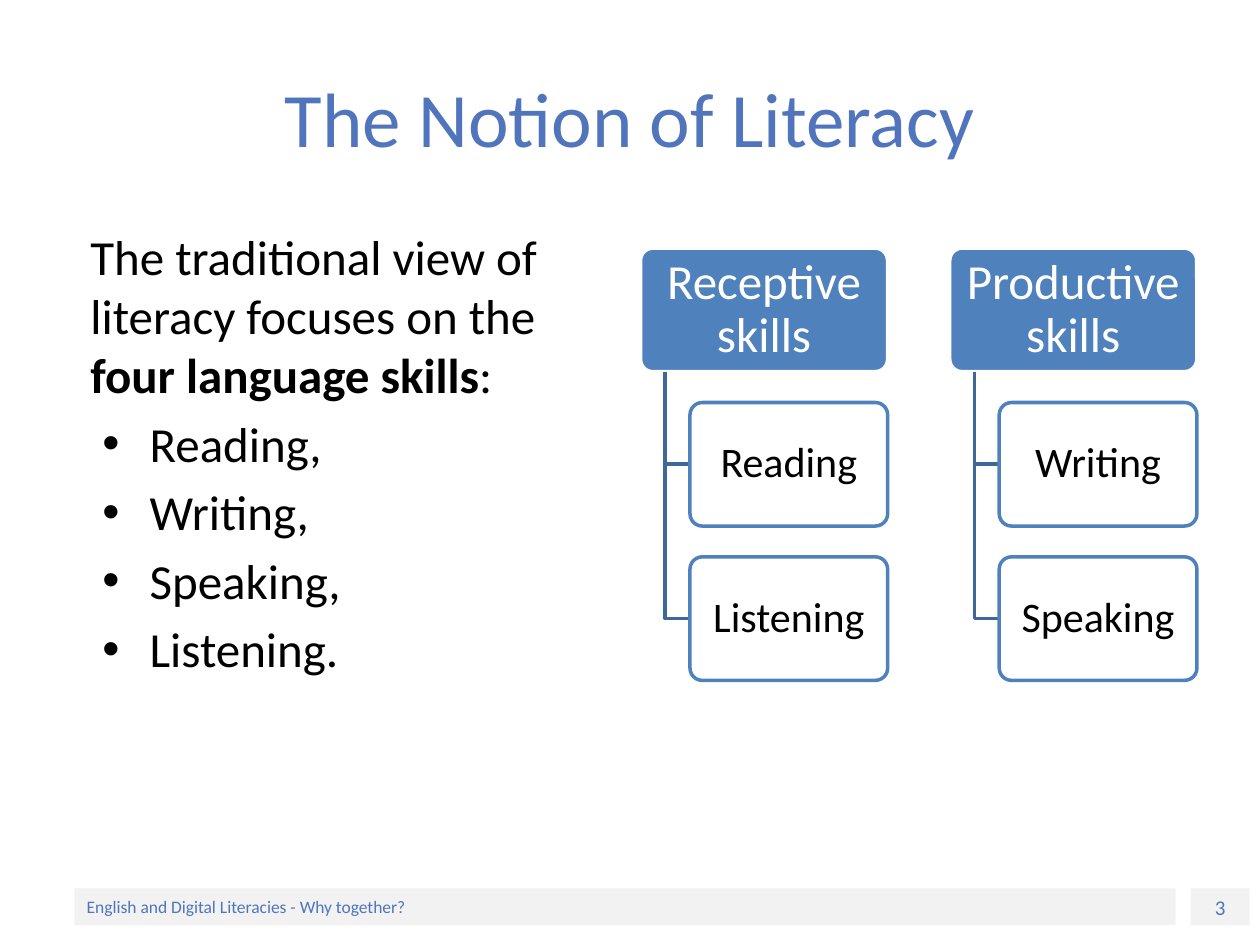
from lxml import etree
from pptx import Presentation
from pptx.dml.color import RGBColor
from pptx.enum import shapes, text
from pptx.oxml import ns
from pptx.util import Pt

BLUE = RGBColor(0x50, 0x75, 0xBC)
FILL = RGBColor(0x4F, 0x81, 0xBD)
LINE = RGBColor(0x3F, 0x67, 0x97)
GREY = RGBColor(0xF2, 0xF2, 0xF2)
WHITE = RGBColor(0xFF, 0xFF, 0xFF)
BLACK = RGBColor(0, 0, 0)
KIND = shapes.MSO_SHAPE
MID = text.MSO_ANCHOR.MIDDLE
LEFT, CENTER = text.PP_ALIGN.LEFT, text.PP_ALIGN.CENTER


def write(par, words, size, color, align=LEFT, bold=False):
    par.alignment = align
    run = par.add_run()
    run.text = words
    form = {"name": "Calibri", "size": Pt(size), "bold": bold}
    for key, val in form.items():
        setattr(run.font, key, val)
    run.font.color.rgb = color


def block(kind, left, top, width, height, fill, edge=None, pad=(7.2, 3.6)):
    """Add a filled shape and return it with its first paragraph."""
    box = slide.shapes.add_shape(kind, Pt(left), Pt(top), Pt(width), Pt(height))
    box.shadow.inherit = False
    box.fill.solid()
    box.fill.fore_color.rgb = fill
    if edge is None:
        box.line.fill.background()
    else:
        box.line.color.rgb = edge
        box.line.width = Pt(2)
        box.adjustments[0] = 0.1
    frame = box.text_frame
    form = {"word_wrap": True, "vertical_anchor": MID,
            "margin_left": Pt(pad[0]), "margin_right": Pt(pad[0]),
            "margin_top": Pt(pad[1]), "margin_bottom": Pt(pad[1])}
    for key, val in form.items():
        setattr(frame, key, val)
    return box, frame.paragraphs[0]


prs = Presentation()
prs.slide_width, prs.slide_height = Pt(720), Pt(540)
slide = prs.slides.add_slide(prs.slide_layouts[6])

# Footer
foot = [(680.4, 33.8, "3", 12, CENTER),
        (42.5, 629.3, "English and Digital Literacies - Why together?", 10, LEFT)]
for left, width, words, size, align in foot:
    box, par = block(KIND.RECTANGLE, left, 507.6, width, 21, GREY)
    write(par, words, size, BLUE, align)

# Title
title = slide.shapes.add_textbox(Pt(36), Pt(21.6), Pt(648), Pt(90)).text_frame
title.word_wrap = True
title.vertical_anchor = MID
write(title.paragraphs[0], "The Notion of Literacy", 44, BLUE, CENTER)

# Body
body = slide.shapes.add_textbox(Pt(36), Pt(126), Pt(318), Pt(356.4)).text_frame
body.word_wrap = True
par = body.paragraphs[0]
par.space_before = Pt(5.6)
par._p.get_or_add_pPr().set("marL", str(Pt(8.6)))
write(par, "The traditional view of literacy focuses on the ", 28, BLACK)
write(par, "four language skills", 28, BLACK, bold=True)
write(par, ":", 28, BLACK)
for words in ("Reading,", "Writing,", "Speaking,", "Listening."):
    par = body.add_paragraph()
    par.space_before = Pt(5.6)
    props = par._p.get_or_add_pPr()
    props.set("marL", str(Pt(42.5)))
    props.set("indent", str(Pt(-27)))
    etree.SubElement(props, ns.qn("a:buFont")).set("typeface", "Arial")
    etree.SubElement(props, ns.qn("a:buChar")).set("char", "•")
    write(par, words, 28, BLACK)

# Skill trees
TOP, HIGH, STEP = 141.8, 70.6, 88.2
trees = [("Receptive skills", ("Reading", "Listening")),
         ("Productive skills", ("Writing", "Speaking"))]
for col, (head, skills) in enumerate(trees):
    left = 366 + 176.7 * col
    stem, inner = left + 14.1, left + 28.3
    box, par = block(KIND.ROUNDED_RECTANGLE, left, TOP, 141.2, HIGH,
                     FILL, WHITE, (6.2, 4.8))
    par.line_spacing = 0.9
    write(par, head, 28, WHITE, CENTER)
    for row, skill in enumerate(skills, 1):
        top = TOP + STEP * row
        mid = top + HIGH / 2
        path = slide.shapes.build_freeform(Pt(stem), Pt(TOP + HIGH))
        path.add_line_segments([(Pt(stem), Pt(mid)), (Pt(inner), Pt(mid))],
                               close=False)
        elbow = path.convert_to_shape()
        elbow.shadow.inherit = False
        elbow.fill.background()
        elbow.line.color.rgb = LINE
        elbow.line.width = Pt(2)
        box, par = block(KIND.ROUNDED_RECTANGLE, inner, top, 113, HIGH,
                         WHITE, FILL, (5.5, 4.4))
        tint = box.fill._xPr.find(".//" + ns.qn("a:srgbClr"))
        etree.SubElement(tint, ns.qn("a:alpha")).set("val", "90000")
        par.line_spacing = 0.9
        write(par, skill, 24, BLACK, CENTER)

prs.save("out.pptx")
